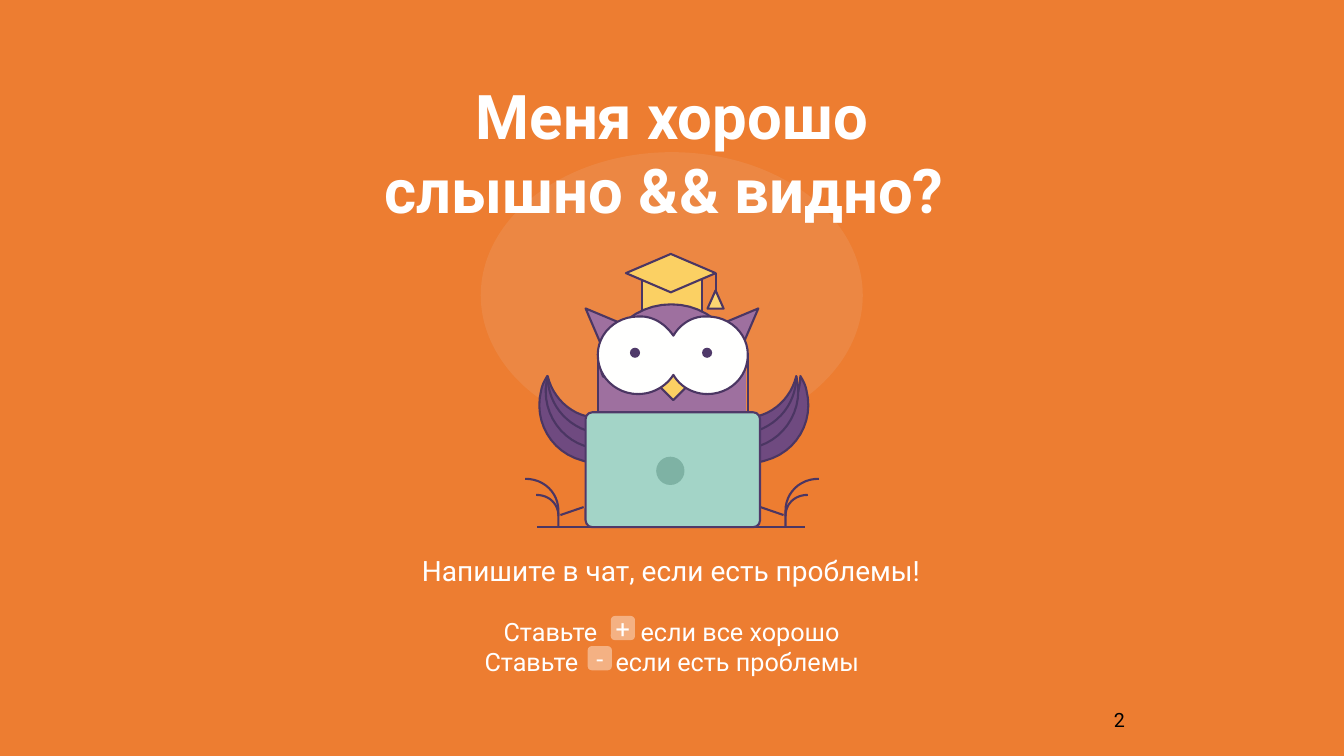
import pptx
import pptx.util
import pptx.dml.color
import pptx.enum.shapes
import pptx.enum.text
import pptx.oxml.ns
import lxml.etree

Pt = pptx.util.Pt
KIND = pptx.enum.shapes.MSO_SHAPE
ALIGN = pptx.enum.text.PP_ALIGN
ANCHOR = pptx.enum.text.MSO_ANCHOR

HUES = {
    "back": "ED7D31", "halo": "E7E6E6", "white": "FFFFFF", "black": "000000",
    "ink": "4B3663", "wing": "6F4A80", "body": "9E709F", "gold": "FBD063",
    "tassel": "FCD672", "eye": "FFFFFE", "pupil": "4F3969",
    "laptop": "A3D4C7", "dot": "7EB2A4",
}
STROKE = 1.5

# Outlines: a pair is a line to a point, six numbers are a Bezier curve
WING = [(534.2, 319.7), (534.2, 316, 534.2, 312.5, 534.2, 308.9),
        (538.6, 308.9, 542.9, 307.4, 547.2, 306),
        (561.6, 299.5, 571.7, 285.1, 571.7, 268.6),
        (573.8, 272.2, 575.3, 275, 576, 278.6),
        (581.8, 301, 568.8, 323.3, 546.5, 329),
        (542.2, 330.5, 537.1, 330.5, 532.8, 330.5),
        (533.5, 326.9, 534.2, 323.3, 534.2, 319.7)]
FEATHER = [(532.8, 319), (533.5, 312.5, 533.5, 305.3, 534.2, 298.8),
           (535, 298.8, 535.7, 298.8, 537.1, 298.1),
           (553, 295.9, 565.2, 283.7, 568.8, 268.6),
           (569.5, 272.2, 570.2, 275.8, 570.2, 279.4),
           (570.2, 301, 553.7, 319, 532.8, 320.4)]
RIB = [(533.5, 308.9), (537.8, 308.9, 541.4, 307.4, 545, 306),
       (560.2, 298.8, 568.8, 284.4, 568.8, 268.6)]
EAR = [(443.5, 245.5), (433.4, 255.6), (418.3, 220.3), (454.3, 235.4)]
HEAD = [(528.5, 266.4), (528.5, 279.4, 479.5, 255.6, 479.5, 255.6),
        (479.5, 255.6, 429.8, 279.4, 429.8, 266.4),
        (429.8, 239, 452.2, 217.4, 479.5, 217.4),
        (506.9, 217.4, 528.5, 239, 528.5, 266.4)]
EYES = [(505.4, 226.1), (495.4, 225.4, 486, 231.1, 481, 239.8),
        (475.2, 231.1, 465.8, 225.4, 455.8, 226.1),
        (439.9, 226.1, 427, 238.3, 427, 253.4),
        (427, 269.3, 439.9, 281.5, 455.8, 281.5),
        (466.6, 281.5, 475.9, 275.8, 481, 267.8),
        (486, 276.5, 495.4, 281.5, 505.4, 281.5),
        (521.3, 281.5, 534.2, 269.3, 534.2, 253.4),
        (534.2, 238.3, 521.3, 226.1, 505.4, 226.1)]
STEM = [(375.1, 342), (388.8, 342, 398.9, 352.1, 398.9, 365), (398.9, 376.6)]
LEAF = [(383, 353.5), (392.4, 353.5, 398.9, 360, 398.9, 368.6)]
TWIG = (400.3, 367.9, 416.9, 362.2)


def color(name):
    return pptx.dml.color.RGBColor.from_string(HUES[name])


def paint(shape, fill=None, line=None, alpha=None):
    shape.shadow.inherit = False
    if fill:
        shape.fill.solid()
        shape.fill.fore_color.rgb = color(fill)
    else:
        shape.fill.background()
    if line:
        shape.line.color.rgb = color(line)
        shape.line.width = Pt(STROKE)
    else:
        shape.line.fill.background()
    if alpha:
        tone = shape.fill._xPr.find(".//" + pptx.oxml.ns.qn("a:srgbClr"))
        lxml.etree.SubElement(tone, pptx.oxml.ns.qn("a:alpha"), val=str(alpha * 1000))
    return shape


def form(slide, kind, box, **look):
    return paint(slide.shapes.add_shape(kind, *map(Pt, box)), **look)


def flip(outline, total):
    """Mirror an outline; total is the sum of each pair of mirrored x values."""
    return [tuple(total - v if i % 2 == 0 else v for i, v in enumerate(step))
            for step in outline]


def trace(outline, steps=12):
    """Turn lines and Bezier curves into a list of points."""
    points = [outline[0]]
    for step in outline[1:]:
        if len(step) == 2:
            points.append(step)
            continue
        nodes = [points[-1], step[:2], step[2:4], step[4:]]
        for n in range(1, steps + 1):
            t = n / steps
            parts = ((1 - t) ** 3, 3 * t * (1 - t) ** 2, 3 * t * t * (1 - t), t ** 3)
            points.append(tuple(sum(w * p[a] for w, p in zip(parts, nodes))
                                for a in (0, 1)))
    return points


def draw(slide, outline, fill=None, line="ink"):
    points = [(Pt(x), Pt(y)) for x, y in trace(outline)]
    pen = slide.shapes.build_freeform(*points[0])
    pen.add_line_segments(points[1:], close=fill is not None)
    return paint(pen.convert_to_shape(), fill, line)


def rule(slide, x1, y1, x2, y2):
    link = slide.shapes.add_connector(
        pptx.enum.shapes.MSO_CONNECTOR.STRAIGHT, Pt(x1), Pt(y1), Pt(x2), Pt(y2))
    link.line.color.rgb = color("ink")
    link.line.width = Pt(STROKE)
    lxml.etree.SubElement(link._element.spPr, pptx.oxml.ns.qn("a:effectLst"))


def write(shape, *lines, size=18, hue="white", bold=False, align=ALIGN.CENTER,
          anchor=ANCHOR.MIDDLE, pad=(0, 0), hang=()):
    """Fill a shape with text; hang holds the start and tab stop of each line."""
    frame = shape.text_frame
    frame.word_wrap = True
    frame.vertical_anchor = anchor
    frame.margin_left = frame.margin_right = Pt(pad[0])
    frame.margin_top = frame.margin_bottom = Pt(pad[1])
    for i, line in enumerate(lines):
        para = frame.paragraphs[0] if i == 0 else frame.add_paragraph()
        para.alignment = align
        if hang:
            start, stop = hang[i]
            props = para._p.get_or_add_pPr()
            props.set("marL", str(Pt(stop)))
            props.set("indent", str(Pt(start - stop)))
        run = para.add_run()
        run.text = line
        font = run.font
        font.name, font.size, font.bold = "Roboto", Pt(size), bold
        font.color.rgb = color(hue)


def label(slide, box, *lines, **style):
    write(slide.shapes.add_textbox(*map(Pt, box)), *lines, **style)


def badge(slide, x, y, sign):
    key = form(slide, KIND.ROUNDED_RECTANGLE, (x, y, 17.3, 17.3), fill="white", alpha=40)
    key.adjustments[0] = 0.17
    write(key, sign)


def owl(slide):
    # Wings
    for outer, inner, rib in ((WING, FEATHER, RIB),
                              (flip(WING, 962.6), flip(FEATHER, 960), flip(RIB, 960))):
        draw(slide, outer, "wing")
        draw(slide, inner, "wing")
        draw(slide, rib)
    # Cap base, body and ears
    form(slide, KIND.RECTANGLE, (458.6, 198.7, 43.2, 30.3), fill="gold", line="ink")
    form(slide, KIND.RECTANGLE, (427, 257, 105.8, 67.7), fill="body")
    for ear in (EAR, flip(EAR, 960)):
        draw(slide, ear, "body")
    # Face
    draw(slide, HEAD, "body")
    form(slide, KIND.DIAMOND, (471.6, 267.1, 18.7, 18.7), fill="gold", line="ink")
    draw(slide, EYES, "eye")
    for x in (450, 501.5):
        form(slide, KIND.OVAL, (x, 248.4, 7.2, 7.2), fill="pupil")
    for x in (427, 534.2):
        rule(slide, x, 252.7, x, 295.9)
    # Ground and plants
    rule(slide, 383.8, 376.6, 575.3, 376.6)
    for total in (None, 960):
        for part in (STEM, LEAF):
            draw(slide, flip(part, total) if total else part)
        x1, y1, x2, y2 = TWIG
        rule(slide, *((total - x1, y1, total - x2, y2) if total else TWIG))
    # Laptop
    lid = form(slide, KIND.ROUNDED_RECTANGLE, (418.3, 294.5, 124.6, 82.1),
               fill="laptop", line="pupil")
    lid.adjustments[0] = 0.06
    form(slide, KIND.OVAL, (468.7, 326.2, 20.2, 20.2), fill="dot")
    # Cap top and tassel
    form(slide, KIND.ISOSCELES_TRIANGLE, (505.4, 207.4, 11.5, 13), fill="tassel", line="ink")
    form(slide, KIND.DIAMOND, (447.1, 181.4, 64.1, 27.4), fill="gold", line="ink")
    rule(slide, 511.2, 195.1, 511.2, 208)


def main():
    deck = pptx.Presentation()
    deck.slide_width, deck.slide_height = Pt(960), Pt(540)
    slide = deck.slides.add_slide(deck.slide_layouts[6])
    slide.background.fill.solid()
    slide.background.fill.fore_color.rgb = color("back")

    # Title over the halo
    form(slide, KIND.OVAL, (343.4, 108.7, 272.9, 204.5), fill="halo", alpha=10)
    label(slide, (246.2, 52.6, 468, 111.6), "Меня хорошо слышно && видно? ",
          size=44, bold=True, pad=(5, 3))
    owl(slide)

    # Chat prompt with its two keys
    label(slide, (162, 392.4, 635, 29.5), "Напишите в чат, если есть проблемы!",
          size=20, pad=(5, 3))
    label(slide, (339.1, 437, 283.7, 49), "Ставьте\tесли все хорошо",
          "Ставьте\tесли есть проблемы", align=ALIGN.LEFT, anchor=ANCHOR.TOP,
          pad=(5, 3), hang=((15.6, 113.5), (2, 95.6)))
    badge(slide, 436.3, 440, "+")
    badge(slide, 419.8, 461.5, "-")

    # Slide number
    label(slide, (795.6, 501.8, 105.1, 25.2), "2", size=14, hue="black", align=ALIGN.LEFT)
    deck.save("out.pptx")


if __name__ == "__main__":
    main()
